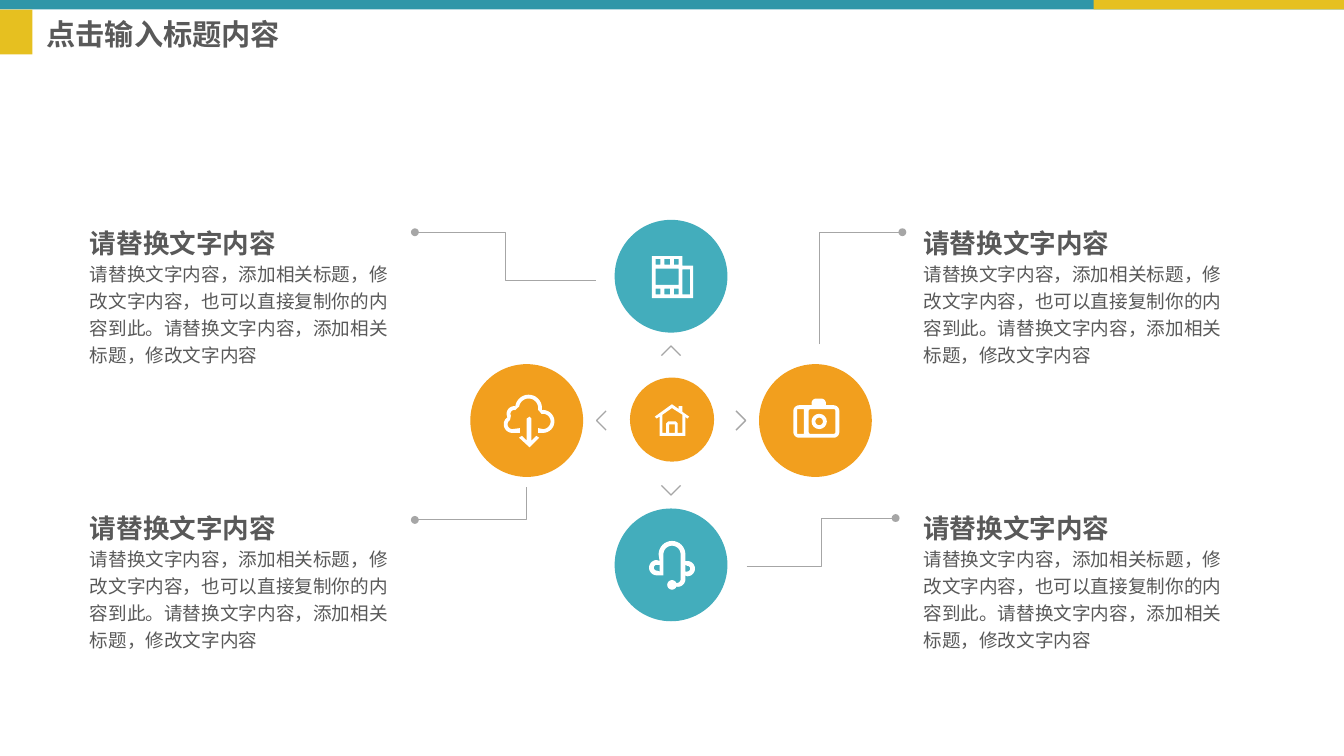
"""Build a slide with four orbiting icon circles and their captions."""
import math
from dataclasses import dataclass
from itertools import product

import pptx
import pptx.dml.color
import pptx.enum.shapes
import pptx.enum.text
import pptx.oxml
import pptx.oxml.ns
import pptx.util

Point = tuple[float, float]
Contour = list[Point]

COLORS = {"bar": "2F96A8", "yellow": "E6C020", "teal": "43ADBC", "orange": "F29F1E",
          "line": "A6A6A6", "text": "595959", "icon": "FFFFFF"}
CM_PER_UNIT = 2.54
CENTER_X, CENTER_Y = 7.02, 4.4
ORBIT, CHEVRON_ORBIT = 1.51, 0.78
FONT = {"name": "Roboto Condensed", "bold": True}
HEADING = "请替换文字内容"
BODY = "请替换文字内容，添加相关标题，修改文字内容，也可以直接复制你的内容到此。请替换文字内容，添加相关标题，修改文字内容"


@dataclass
class Block:
    preset: pptx.enum.shapes.MSO_SHAPE
    left: float
    top: float
    width: float
    height: float
    color: str


@dataclass
class Satellite:
    step_x: int
    step_y: int
    color: str
    leader: Contour


@dataclass
class Line:
    text: str
    size: float
    bold: bool
    spacing: float
    before: float = 0


def length(units: float) -> int:
    return pptx.util.Cm(units * CM_PER_UNIT)


def color(name: str) -> pptx.dml.color.RGBColor:
    return pptx.dml.color.RGBColor.from_string(COLORS[name])


def box(left: float, top: float, right: float, bottom: float) -> Contour:
    return [(left, top), (right, top), (right, bottom), (left, bottom)]


def arc(x: float, y: float, radius: float, start: float, end: float) -> Contour:
    steps = 16
    angles = [math.radians(start + (end - start) * step / steps) for step in range(steps + 1)]
    return [(x + radius * math.cos(angle), y + radius * math.sin(angle)) for angle in angles]


def rounded(left: float, top: float, right: float, bottom: float, radius: float) -> Contour:
    corners = [(left + radius, top + radius, 180), (right - radius, top + radius, 270),
               (right - radius, bottom - radius, 0), (left + radius, bottom - radius, 90)]
    return [point for x, y, start in corners for point in arc(x, y, radius, start, start + 90)]


def film_icon() -> list[Contour]:
    columns, rows = [(6.86, 6.91), (6.95, 7.01), (7.05, 7.1)], [(2.71, 2.77), (3.02, 3.08)]
    holes = [box(left, top, right, bottom) for (left, right), (top, bottom) in product(columns, rows)]
    outline = [(6.82, 2.68), (7.14, 2.68), (7.14, 2.78), (7.25, 2.78), (7.25, 3.12), (6.82, 3.12)]
    return [outline, *holes, box(6.86, 2.81, 7.1, 2.98), box(7.14, 2.82, 7.22, 3.08)]


def cloud_icon() -> list[Contour]:
    puffs = [(5.36, 4.44, 0.07, 90, 240), (5.38, 4.33, 0.06, 150, 285),
             (5.53, 4.27, 0.12, 190, 370), (5.68, 4.41, 0.1, 260, 450)]
    outer, inner = ([point for x, y, radius, start, end in puffs
                     for point in arc(x, y, radius + offset, start, end)] for offset in (0.02, -0.02))
    return [[(5.44, 4.53), *outer, (5.63, 4.53), (5.63, 4.48), *reversed(inner), (5.44, 4.48)]]


def arrow_icon() -> list[Contour]:
    return [[(5.51, 4.38), (5.54, 4.36), (5.56, 4.38), (5.56, 4.61), (5.61, 4.56), (5.64, 4.58),
             (5.54, 4.68), (5.43, 4.58), (5.46, 4.56), (5.51, 4.61)]]


def headset_icon() -> list[Contour]:
    outline = [*arc(7.03, 5.8, 0.14, 360, 180), (6.9, 5.87), *arc(6.87, 5.94, 0.08, 270, 90),
               (6.94, 6.02), *arc(7.03, 5.8, 0.09, 180, 360), *arc(7.08, 6.06, 0.04, 0, 90),
               *arc(7.03, 6.12, 0.05, -20, -340), *arc(7.09, 6.06, 0.08, 90, 0),
               (7.17, 6.02), *arc(7.19, 5.95, 0.08, 90, -90), (7.17, 5.87)]
    return [outline, [(6.9, 5.91), (6.9, 5.98), *arc(6.87, 5.94, 0.03, 90, 270)],
            [(7.17, 5.91), (7.17, 5.98), *arc(7.19, 5.95, 0.03, 90, -90)]]


def camera_icon() -> list[Contour]:
    body = rounded(8.3, 4.24, 8.78, 4.58, 0.06)
    bump = [(8.49, 4.24), *arc(8.54, 4.22, 0.05, 180, 270), *arc(8.59, 4.22, 0.05, 270, 360), (8.64, 4.24)]
    corner = len(body) // 4
    return [body[:corner] + bump + body[corner:], box(8.34, 4.28, 8.41, 4.54),
            rounded(8.46, 4.28, 8.74, 4.54, 0.02)]


def lens_icon() -> list[Contour]:
    return [arc(8.57, 4.41, radius, 0, 360) for radius in (0.08, 0.04)]


def house_icon() -> list[Contour]:
    outline = [(6.85, 4.36), (7.03, 4.23), (7.1, 4.28), (7.1, 4.25), (7.14, 4.25), (7.14, 4.31),
               (7.21, 4.36), (7.19, 4.38), (7.17, 4.36), (7.17, 4.56), (6.9, 4.56), (6.9, 4.36), (6.87, 4.38)]
    room = [(7.14, 4.53), (7.09, 4.53), (7.09, 4.43), (7.07, 4.41), (6.99, 4.41), (6.97, 4.43),
            (6.97, 4.53), (6.93, 4.53), (6.93, 4.34), (7.03, 4.27), (7.14, 4.34)]
    return [outline, room, box(7, 4.44, 7.06, 4.53)]


BLOCKS = [Block(pptx.enum.shapes.MSO_SHAPE.RECTANGLE, *values) for values in (
    (0, 0, 14.06, 0.1, "bar"), (11.44, 0, 2.62, 0.1, "yellow"), (0, 0.1, 0.34, 0.47, "yellow"))]
SATELLITES = [
    Satellite(0, -1, "teal", [(6.23, 2.94), (5.29, 2.94), (5.29, 2.43), (4.34, 2.43)]),
    Satellite(1, 0, "orange", [(8.57, 3.6), (8.57, 2.43), (9.44, 2.43)]),
    Satellite(0, 1, "teal", [(7.81, 5.93), (8.59, 5.93), (8.59, 5.42), (9.37, 5.42)]),
    Satellite(-1, 0, "orange", [(5.51, 5.1), (5.51, 5.44), (4.34, 5.44)])]
ICONS = [film_icon, cloud_icon, arrow_icon, headset_icon, camera_icon, lens_icon, house_icon]


def add_block(slide, block: Block) -> None:
    shape = slide.shapes.add_shape(block.preset, *map(length, (block.left, block.top, block.width, block.height)))
    shape.shadow.inherit = False
    shape.fill.solid()
    shape.fill.fore_color.rgb = color(block.color)
    shape.line.fill.background()


def add_circle(slide, x: float, y: float, size: float, fill: str) -> None:
    add_block(slide, Block(pptx.enum.shapes.MSO_SHAPE.OVAL, x - size / 2, y - size / 2, size, size, fill))


def add_outline(slide, contours: list[Contour], close: bool):
    first, *others = [[(length(x), length(y)) for x, y in contour] for contour in contours]
    builder = slide.shapes.build_freeform(*first[0])
    builder.add_line_segments(first[1:], close=close)
    for contour in others:
        builder.move_to(*contour[0])
        builder.add_line_segments(contour[1:], close=close)
    shape = builder.convert_to_shape()
    shape.shadow.inherit = False
    return shape


def add_icon(slide, contours: list[Contour]) -> None:
    shape = add_outline(slide, contours, True)
    shape.fill.solid()
    shape.fill.fore_color.rgb = color("icon")
    shape.line.fill.background()


def add_polyline(slide, points: Contour, width: float, dot: bool) -> None:
    shape = add_outline(slide, [points], False)
    shape.fill.background()
    shape.line.color.rgb = color("line")
    shape.line.width = pptx.util.Pt(width)
    if dot:
        namespace = pptx.oxml.ns.nsdecls("a")
        shape.line._get_or_add_ln().append(pptx.oxml.parse_xml(f'<a:tailEnd {namespace} type="oval"/>'))


def add_text(slide, place: tuple[float, float, float, float], lines: list[Line], frame_format: dict) -> None:
    frame = slide.shapes.add_textbox(*map(length, place)).text_frame
    for name, value in {"word_wrap": True, **frame_format}.items():
        setattr(frame, name, value)
    for index, line in enumerate(lines):
        paragraph = frame.add_paragraph() if index else frame.paragraphs[0]
        paragraph.line_spacing = line.spacing
        paragraph.space_before = pptx.util.Pt(line.before)
        run = paragraph.add_run()
        run.text = line.text
        for name, value in {**FONT, "size": pptx.util.Pt(line.size), "bold": line.bold}.items():
            setattr(run.font, name, value)
        run.font.color.rgb = color("text")


def main() -> None:
    presentation = pptx.Presentation()
    presentation.slide_width, presentation.slide_height = length(14.06), length(7.91)
    slide = presentation.slides.add_slide(presentation.slide_layouts[6])
    for block in BLOCKS:
        add_block(slide, block)
    add_circle(slide, 7.03, 4.39, 0.88, "orange")
    for item in SATELLITES:
        add_circle(slide, CENTER_X + ORBIT * item.step_x, CENTER_Y + ORBIT * item.step_y, 1.18, item.color)
        add_polyline(slide, item.leader, 0.75, True)
        chevron = [(CENTER_X + item.step_x * (CHEVRON_ORBIT - back) - item.step_y * side,
                    CENTER_Y + item.step_y * (CHEVRON_ORBIT - back) + item.step_x * side)
                   for back, side in ((0.1, -0.1), (0, 0), (0.1, 0.1))]
        add_polyline(slide, chevron, 1, False)
    for icon in ICONS:
        add_icon(slide, icon())
    caption = [Line(HEADING, 20, True, 1.2), Line(BODY, 14, False, 1.2)]
    caption_format = {f"margin_{side}": 0 for side in ("left", "top", "right", "bottom")}
    caption_format["auto_size"] = pptx.enum.text.MSO_AUTO_SIZE.SHAPE_TO_FIT_TEXT
    for (left, width), top in product([(0.94, 3.17), (9.66, 3.28)], [2.31, 5.29]):
        add_text(slide, (left, top, width, 1.53), caption, caption_format)
    add_text(slide, (0.39, 0.14, 3.62, 0.47), [Line("点击输入标题内容", 22, True, 0.9, 10)],
             {"vertical_anchor": pptx.enum.text.MSO_ANCHOR.MIDDLE})
    presentation.save("out.pptx")


if __name__ == "__main__":
    main()
